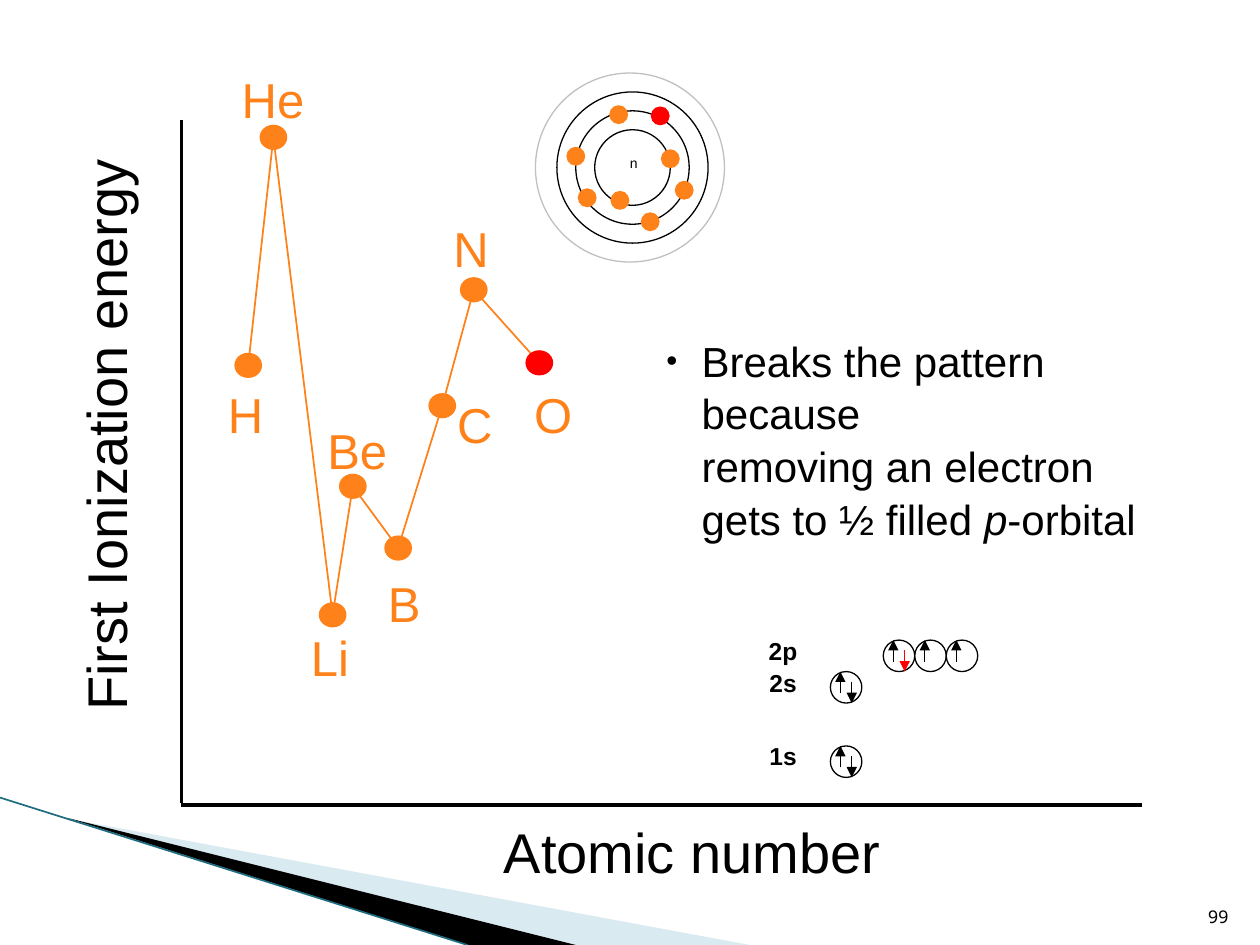
from lxml.etree import SubElement
from pptx import Presentation
from pptx.dml.color import RGBColor
from pptx.enum.shapes import MSO_CONNECTOR, MSO_SHAPE
from pptx.enum.text import MSO_ANCHOR as Anchor, PP_ALIGN as Align
from pptx.oxml.ns import qn
from pptx.util import Inches, Pt

BLACK, ORANGE, RED = "000000", "FF8119", "FF0000"

# Element: centre of its point, then left and top of its label with the width
ELEMENTS = [
    ("H", (1.97, 2.9), (1.71, 3.0, 0.38)),
    ("He", (2.17, 1.09), (1.82, 0.5, 0.73)),
    ("Li", (2.64, 4.88), (2.37, 4.93, 0.73)),
    ("Be", (2.8, 3.86), (2.5, 3.28, 0.94)),
    ("B", (3.16, 4.35), (2.98, 4.5, 0.94)),
    ("C", (3.51, 3.22), (3.53, 3.08, 0.61)),
    ("N", (3.76, 2.3), (3.5, 1.68, 0.61)),
    ("O", (4.28, 2.88), (4.14, 3.0, 0.61)),
]
AXES = [((1.44, 0.95), (1.44, 6.37)), ((9.06, 6.39), (1.44, 6.39))]
AXIS_TITLES = [("First Ionization energy", (-1.47, 3.12, 4.61, 0.63), 270),
               ("Atomic number", (3.9, 6.44, 3.23, 0.63), 0)]

# Atom: centre, diameter and colour of each shell; centres of the electrons
SHELLS = [((5.02, 1.33), 0.6, BLACK), ((5.02, 1.33), 0.9, BLACK),
          ((5.02, 1.33), 1.2, BLACK), ((5.0, 1.33), 1.5, "C0C0C0")]
ELECTRONS = [(4.92, 1.59), (5.32, 1.26), (4.66, 1.57), (4.91, 0.91),
             (5.16, 1.76), (4.57, 1.24), (5.43, 1.51)]
LAST_ELECTRON = (5.24, 0.92)

# Subshell: label top, left and top of the first orbital, spins per orbital
ORBITAL = 0.25
SUBSHELLS = [
    ("2p", 5.0, (7.01, 5.08), [[("up", BLACK), ("down", RED)],
                               [("up", BLACK)], [("up", BLACK)]]),
    ("2s", 5.25, (6.59, 5.33), [[("up", BLACK), ("down", BLACK)]]),
    ("1s", 5.83, (6.59, 5.92), [[("up", BLACK), ("down", BLACK)]]),
]
SPINS = {"up": (0.08, 0.17, 0), "down": (0.17, 0.08, 0.25)}  # x, start y, end y

REASON = [[("Breaks the pattern because", False)],
          [("removing an electron", False)],
          [("gets to ½ filled ", False), ("p", True), ("-orbital", False)]]

SWOOSHES = [([(0.55, 6.5), (5.95, 7.5), (4.56, 7.5)], "A0CBDC", 40),
            ([(0.53, 6.49), (4.57, 7.5), (3.72, 7.5)], BLACK, 100)]
SWOOSH_EDGE = ((0, 6.33), (3.71, 7.5))


def rgb(hex_colour):
    return RGBColor.from_string(hex_colour)


def paint(shape, fill=None, line=None, opacity=100):
    shape.shadow.inherit = False
    if fill:
        shape.fill.solid()
        shape.fill.fore_color.rgb = rgb(fill)
        if opacity < 100:
            colour = shape.fill._xPr.find(qn("a:solidFill"))[0]
            SubElement(colour, qn("a:alpha"), val=str(opacity * 1000))
    else:
        shape.fill.background()
    if line:
        shape.line.color.rgb = rgb(line)
        shape.line.width = Pt(0.75)
    else:
        shape.line.fill.background()


def add_oval(shapes, centre, width, height, **style):
    x, y = centre
    oval = shapes.add_shape(MSO_SHAPE.OVAL, Inches(x - width / 2), Inches(y - height / 2),
                            Inches(width), Inches(height))
    paint(oval, **style)


def add_line(shapes, start, end, colour, width, arrow=False):
    line = shapes.add_connector(MSO_CONNECTOR.STRAIGHT, *map(Inches, start + end))
    line.line.color.rgb = rgb(colour)
    line.line.width = Pt(width)
    if arrow:
        SubElement(line.line._get_or_add_ln(), qn("a:tailEnd"), type="triangle")
    SubElement(line._element.spPr, qn("a:effectLst"))


def add_swoosh(shapes, points, colour, opacity):
    corners = [tuple(map(Inches, point)) for point in points]
    builder = shapes.build_freeform(*corners[0], scale=1.0)
    builder.add_line_segments(corners[1:], close=True)
    paint(builder.convert_to_shape(), colour, opacity=opacity)


def add_run(paragraph, text, size, colour=BLACK, font="Arial", bold=None, italic=None):
    run = paragraph.add_run()
    run.text = text
    run.font.size, run.font.name = Pt(size), font
    run.font.bold, run.font.italic = bold, italic
    run.font.color.rgb = rgb(colour)


def add_frame(shapes, box, anchor=Anchor.TOP, wrap=True, rotation=0):
    holder = shapes.add_textbox(*map(Inches, box))
    holder.rotation = rotation
    frame = holder.text_frame
    frame.word_wrap, frame.vertical_anchor = wrap, anchor
    return frame


def add_label(shapes, text, box, size, align=Align.LEFT, anchor=Anchor.BOTTOM,
              wrap=True, rotation=0, **style):
    paragraph = add_frame(shapes, box, anchor, wrap, rotation).paragraphs[0]
    paragraph.alignment = align
    add_run(paragraph, text, size, **style)


def add_energy_plot(shapes):
    for start, end in AXES:
        add_line(shapes, start, end, BLACK, 2)
    for title, box, rotation in AXIS_TITLES:
        add_label(shapes, title, box, 32, rotation=rotation)
    centres = [centre for _, centre, _ in ELEMENTS]
    for start, end in zip(centres, centres[1:]):
        add_line(shapes, start, end, ORANGE, 1)
    for symbol, centre, (left, top, width) in ELEMENTS:
        add_oval(shapes, centre, 0.22, 0.2, fill=RED if symbol == "O" else ORANGE)
        add_label(shapes, symbol, (left, top, width, 0.57), 28, colour=ORANGE)


def add_atom(shapes):
    for centre, diameter, colour in SHELLS:
        add_oval(shapes, centre, diameter, diameter, line=colour)
    add_label(shapes, "n", (4.9, 1.18, 0.27, 0.23), 8, anchor=Anchor.TOP)
    for centre in ELECTRONS:
        add_oval(shapes, centre, 0.15, 0.15, fill=ORANGE)
    add_oval(shapes, LAST_ELECTRON, 0.15, 0.15, fill=RED)


def add_orbital_diagram(shapes):
    for name, label_top, (first_left, top), orbitals in SUBSHELLS:
        add_label(shapes, name, (6.0, label_top, 0.43, 0.33), 14, align=Align.CENTER,
                  anchor=Anchor.TOP, wrap=False, bold=True)
        for column, electrons in enumerate(orbitals):
            left = first_left + column * ORBITAL
            add_oval(shapes, (left + ORBITAL / 2, top + ORBITAL / 2), ORBITAL, ORBITAL,
                     fill="FFFFFF", line=BLACK, opacity=50)
            for spin, colour in electrons:
                x, start, end = SPINS[spin]
                add_line(shapes, (left + x, top + start), (left + x, top + end),
                         colour, 0.75, arrow=True)


def add_reason(shapes):
    frame = add_frame(shapes, (5.19, 2.59, 4.6, 1.3))
    frame.margin_right = Inches(0.3)
    for number, runs in enumerate(REASON):
        paragraph = frame.add_paragraph() if number else frame.paragraphs[0]
        paragraph.line_spacing = 1.05
        properties = paragraph._p.get_or_add_pPr()
        properties.set("marL", str(Inches(0.28)))
        if number == 0:
            properties.set("indent", str(-Inches(0.28)))
            SubElement(properties, qn("a:buSzPct"), val="75000")
            SubElement(properties, qn("a:buFont"), typeface="Arial")
            SubElement(properties, qn("a:buChar"), char="•")
        for text, italic in runs:
            add_run(paragraph, text, 24, italic=italic)


def main():
    deck = Presentation()
    deck.slide_width, deck.slide_height = Inches(10), Inches(7.5)
    shapes = deck.slides.add_slide(deck.slide_layouts[6]).shapes
    for points, colour, opacity in SWOOSHES:
        add_swoosh(shapes, points, colour, opacity)
    add_line(shapes, *SWOOSH_EDGE, "1E6C80", 0.95)
    add_energy_plot(shapes)
    add_atom(shapes)
    add_orbital_diagram(shapes.add_group_shape().shapes)
    add_reason(shapes)
    add_label(shapes, "99", (9.33, 7.01, 0.52, 0.4), 10, align=Align.RIGHT,
              font="Noto Sans Mono")
    deck.save("out.pptx")


if __name__ == "__main__":
    main()
